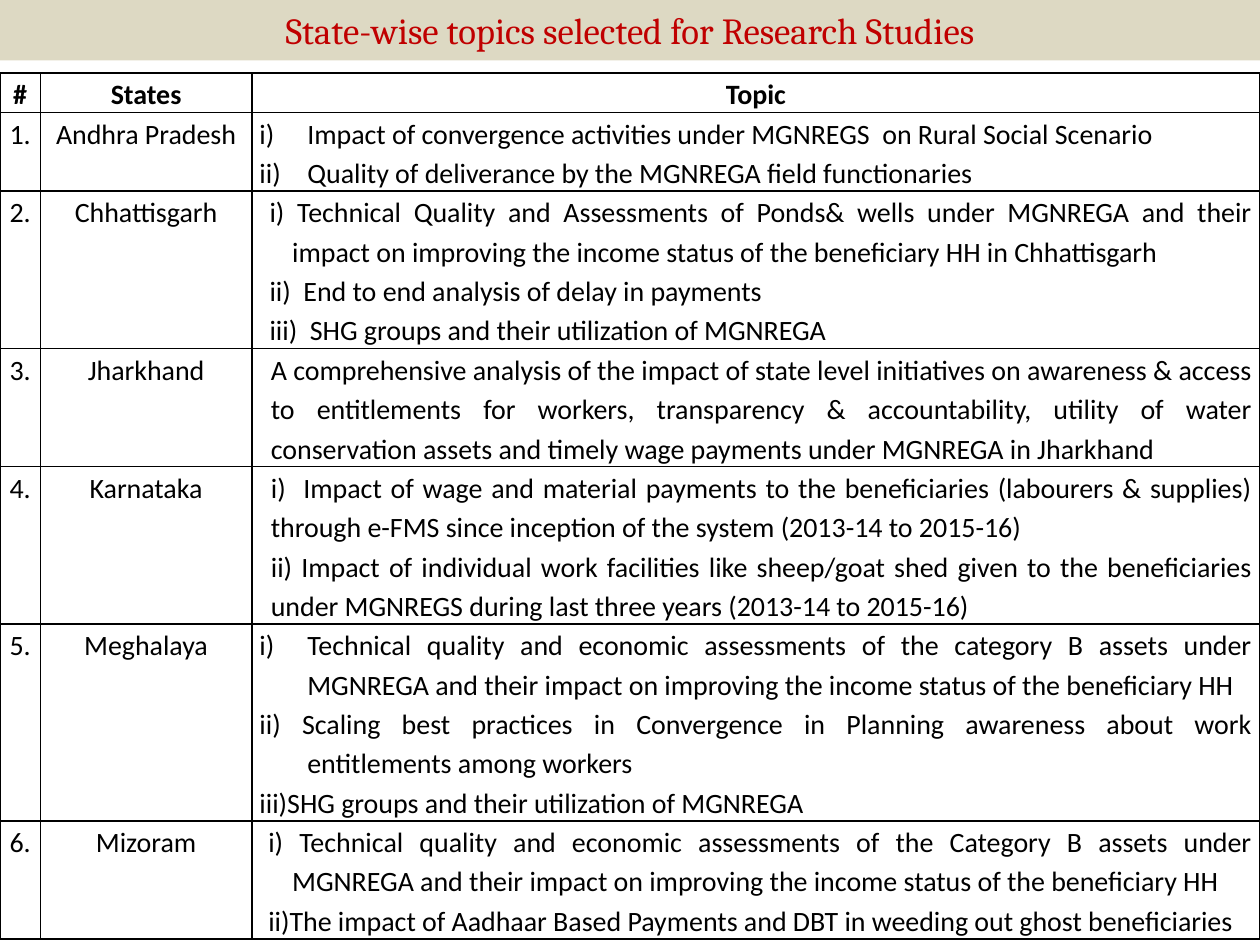
from dataclasses import dataclass

from lxml import etree
from pptx import Presentation
from pptx.dml.color import RGBColor
from pptx.enum.shapes import MSO_SHAPE
from pptx.enum.text import MSO_ANCHOR, PP_ALIGN
from pptx.oxml.ns import qn
from pptx.util import Inches, Pt

RECTANGLE = MSO_SHAPE.RECTANGLE
MIDDLE, TOP = MSO_ANCHOR.MIDDLE, MSO_ANCHOR.TOP
CENTER, JUSTIFY = PP_ALIGN.CENTER, PP_ALIGN.JUSTIFY


@dataclass(frozen=True)
class Theme:
    band: str = "DDD9C3"
    title: str = "C00000"
    text: str = "000000"
    title_font: str = "Cambria"
    body_font: str = "Calibri"
    title_size: int = 21
    body_size: int = 16
    border_width: int = 1
    line_spacing: float = 1.15
    space_after: int = 10
    cell_margin: float = 0.06


@dataclass(frozen=True)
class Topics:
    """Paragraphs of one topic cell with their margin and first-line indent."""
    paragraphs: tuple
    margin: float
    indent: float = 0
    numbered: int = 0  # how many leading paragraphs are numbered automatically


class SlideBuilder:
    def __init__(self, presentation, theme):
        self.theme = theme
        self.slide = presentation.slides.add_slide(presentation.slide_layouts[6])

    def add_run(self, paragraph, text, font, size, color, bold=False):
        run = paragraph.add_run()
        run.text = text
        run.font.name = font
        run.font.size = Pt(size)
        run.font.bold = bold
        run.font.color.rgb = RGBColor.from_string(color)

    def add_title(self, text, left, top, width, height):
        theme = self.theme
        shape = self.slide.shapes.add_shape(
            RECTANGLE, Inches(left), Inches(top), Inches(width), Inches(height))
        shape.shadow.inherit = False
        shape.fill.solid()
        shape.fill.fore_color.rgb = RGBColor.from_string(theme.band)
        shape.line.fill.background()
        frame = shape.text_frame
        frame.word_wrap = True
        frame.vertical_anchor = MIDDLE
        paragraph = frame.paragraphs[0]
        paragraph.alignment = CENTER
        self.add_run(paragraph, text, theme.title_font, theme.title_size, theme.title)

    def add_borders(self, cell):
        properties = cell._tc.get_or_add_tcPr()
        for side in ("a:lnL", "a:lnR", "a:lnT", "a:lnB"):
            line = etree.SubElement(
                properties, qn(side), w=str(Pt(self.theme.border_width)))
            fill = etree.SubElement(line, qn("a:solidFill"))
            etree.SubElement(fill, qn("a:srgbClr"), val=self.theme.text)

    def format_paragraph(self, paragraph, alignment, is_last):
        paragraph.alignment = alignment
        paragraph.line_spacing = self.theme.line_spacing
        paragraph.space_before = Pt(0)
        paragraph.space_after = Pt(self.theme.space_after if is_last else 0)

    def fill_cell(self, cell, content, bold):
        theme = self.theme
        self.add_borders(cell)
        cell.fill.background()
        cell.vertical_anchor = TOP
        cell.margin_left = cell.margin_right = Inches(theme.cell_margin)
        cell.margin_top = cell.margin_bottom = 0
        is_list = isinstance(content, Topics)
        texts = content.paragraphs if is_list else (content,)
        frame = cell.text_frame
        for index, text in enumerate(texts):
            paragraph = frame.add_paragraph() if index else frame.paragraphs[0]
            self.format_paragraph(
                paragraph, JUSTIFY if is_list else CENTER, index == len(texts) - 1)
            if is_list:
                properties = paragraph._p.get_or_add_pPr()
                properties.set("marL", str(Inches(content.margin)))
                properties.set("indent", str(Inches(content.indent)))
                if index < content.numbered:
                    etree.SubElement(
                        properties, qn("a:buAutoNum"), type="romanLcParenR")
            self.add_run(
                paragraph, text, theme.body_font, theme.body_size, theme.text, bold)

    def add_table(self, rows, left, top, column_widths, row_heights):
        table = self.slide.shapes.add_table(
            len(rows), len(column_widths), Inches(left), Inches(top),
            Inches(sum(column_widths)), Inches(sum(row_heights))).table
        table.first_row = table.horz_banding = False
        for column, width in zip(table.columns, column_widths):
            column.width = Inches(width)
        for row, height in zip(table.rows, row_heights):
            row.height = Inches(height)
        for row_index, contents in enumerate(rows):
            for column_index, content in enumerate(contents):
                self.fill_cell(
                    table.cell(row_index, column_index), content, bold=row_index == 0)


STATE_TOPICS = (
    ("Andhra Pradesh", Topics((
        "Impact of convergence activities under MGNREGS  on Rural Social Scenario",
        "Quality of deliverance by the MGNREGA field functionaries",
    ), 0.38, -0.38, numbered=2)),
    ("Chhattisgarh", Topics((
        "i) Technical Quality and Assessments of Ponds& wells under MGNREGA and their "
        "impact on improving the income status of the beneficiary HH in Chhattisgarh",
        "ii)  End to end analysis of delay in payments",
        "iii)  SHG groups and their utilization of MGNREGA",
    ), 0.26, -0.18)),
    ("Jharkhand", Topics((
        "A comprehensive analysis of the impact of state level initiatives on awareness "
        "& access to entitlements for workers, transparency & accountability, utility of "
        "water conservation assets and timely wage payments under MGNREGA in Jharkhand",
    ), 0.09)),
    ("Karnataka", Topics((
        "i)  Impact of wage and material payments to the beneficiaries (labourers & "
        "supplies) through e-FMS since inception of the system (2013-14 to 2015-16)",
        "ii) Impact of individual work facilities like sheep/goat shed given to the "
        "beneficiaries under MGNREGS during last three years (2013-14 to 2015-16)",
    ), 0.09)),
    ("Meghalaya", Topics((
        "Technical quality and economic assessments of the category B assets under "
        "MGNREGA and their impact on improving the income status of the beneficiary HH",
        "ii) Scaling best practices in Convergence in Planning awareness about work "
        "entitlements among workers",
        "iii)SHG groups and their utilization of MGNREGA",
    ), 0.38, -0.38, numbered=1)),
    ("Mizoram", Topics((
        "i) Technical quality and economic assessments of the Category B assets under "
        "MGNREGA and their impact on improving the income status of the beneficiary HH",
        "ii)The impact of Aadhaar Based Payments and DBT in weeding out ghost "
        "beneficiaries",
    ), 0.26, -0.19)),
)


def main():
    presentation = Presentation()
    presentation.slide_width = Inches(10)
    presentation.slide_height = Inches(7.5)
    builder = SlideBuilder(presentation, Theme())

    # Title band
    builder.add_title("State-wise topics selected for Research Studies", 0, 0, 10, 0.48)

    # Table of states and their topics
    rows = [("#", "States", "Topic")]
    rows += [(f"{number}.", state, topics)
             for number, (state, topics) in enumerate(STATE_TOPICS, start=1)]
    builder.add_table(rows, 0, 0.58, column_widths=(0.32, 1.68, 8),
                      row_heights=(0.31, 0.61, 1.23, 0.92, 1.23, 1.53, 0.92))

    presentation.save("out.pptx")


if __name__ == "__main__":
    main()
